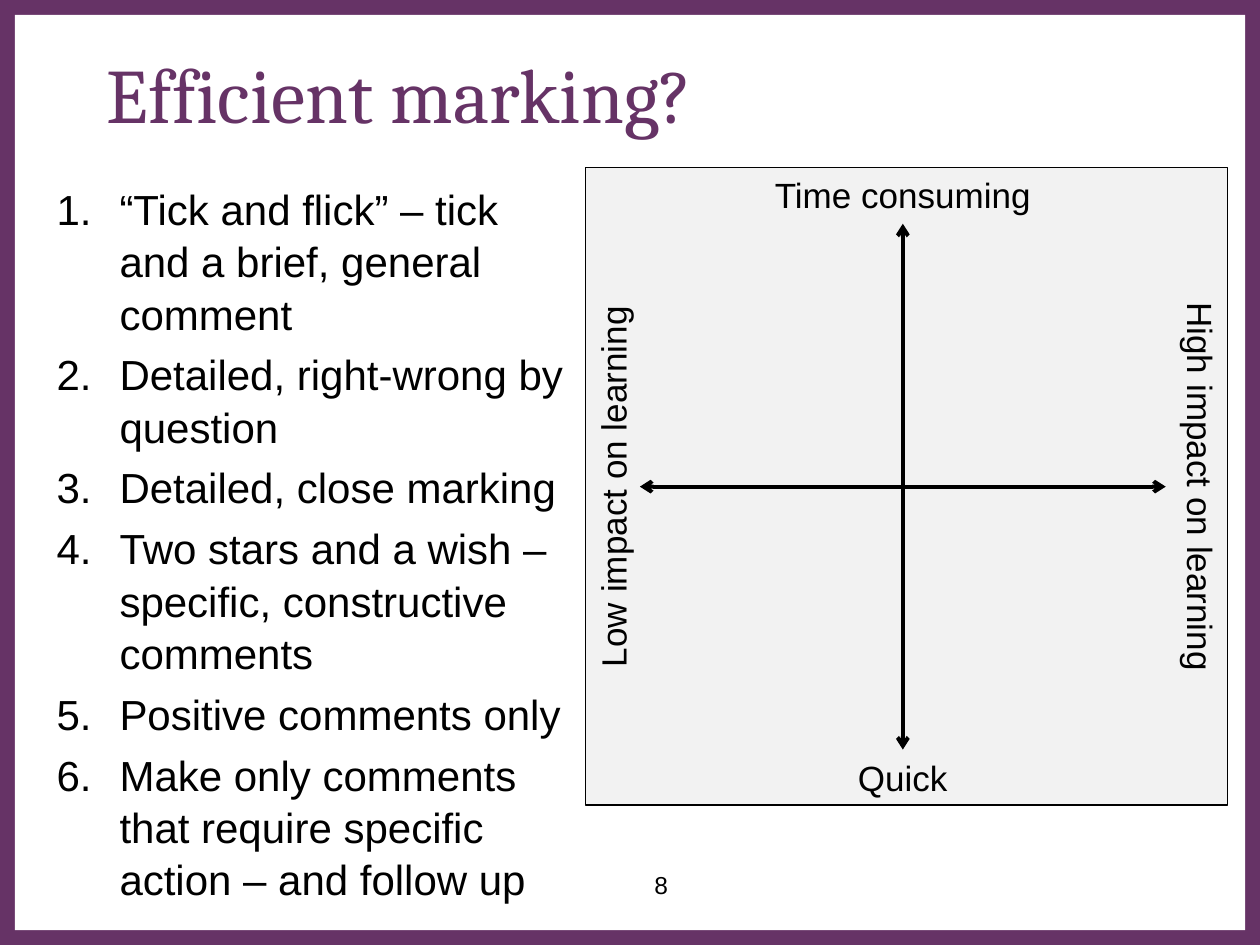
from lxml.etree import SubElement as Sub
from pptx import Presentation as Deck
from pptx.dml.color import RGBColor as Rgb
from pptx.enum.shapes import MSO_CONNECTOR as Conn, MSO_SHAPE as Kind
from pptx.enum.text import MSO_ANCHOR as Anchor, PP_ALIGN as Align
from pptx.oxml.ns import qn
from pptx.util import Cm, Pt

TITLE = "Efficient marking?"
ITEMS = [
    "“Tick and flick” – tick and a brief, general comment",
    "Detailed, right-wrong by question",
    "Detailed, close marking",
    "Two stars and a wish – specific, constructive comments",
    "Positive comments only",
    "Make only comments that require specific action – and follow up",
]
PAGE = "8"

WIDE, HIGH, EDGE = 25.4, 19.05, 0.3
MID, ARM = (18.2, 9.81), 5.3
TAG = 1.12
LABELS = [
    ("Time consuming", 0, -5.87, 8.4, 0),
    ("High impact on learning", 6, 0, 8.86, 90),
    ("Quick", 0, 5.87, 8.4, 0),
    ("Low impact on learning", -5.84, 0, 8.46, 270),
]


class Theme:
    plum = Rgb(0x66, 0x33, 0x66)
    white = Rgb(0xFF, 0xFF, 0xFF)
    grey = Rgb(0xF2, 0xF2, 0xF2)
    black = Rgb(0, 0, 0)
    head, body = "Cambria", "Arial"
    title, list, label, page = 44, 24, 20, 14
    thin, bold = 0.75, 2.25


def write(frame, text, size, font=Theme.body, ink=Theme.black,
          align=Align.LEFT, anchor=Anchor.TOP, number=False):
    frame.word_wrap = True
    frame.vertical_anchor = anchor
    lines = [text] if isinstance(text, str) else text
    for i, line in enumerate(lines):
        para = frame.add_paragraph() if i else frame.paragraphs[0]
        para.alignment = align
        if number:
            para.line_spacing = 1.04
            if i:
                para.space_before = Pt(size * 0.2)
            props = para._p.get_or_add_pPr()
            props.set("marL", str(Cm(1.27)))
            props.set("indent", str(-Cm(1.27)))
            Sub(props, qn("a:buFont"), typeface=font)
            Sub(props, qn("a:buAutoNum"), type="arabicPeriod")
        run = para.add_run()
        run.text = line
        run.font.size = Pt(size)
        run.font.name = font
        run.font.color.rgb = ink


def place(shape, *box):
    shape.left, shape.top, shape.width, shape.height = map(Cm, box)


def block(slide, fill, *box, line=None):
    shape = slide.shapes.add_shape(Kind.RECTANGLE, *map(Cm, box))
    shape.shadow.inherit = False
    shape.fill.solid()
    shape.fill.fore_color.rgb = fill
    if line is None:
        shape.line.fill.background()
    else:
        shape.line.color.rgb = line
        shape.line.width = Pt(Theme.thin)
    return shape


def note(slide, text, size, *box, **form):
    shape = slide.shapes.add_textbox(*map(Cm, box))
    write(shape.text_frame, text, size, **form)
    return shape


def axis(slide, dx, dy):
    x, y = MID
    ends = x - dx, y - dy, x + dx, y + dy
    line = slide.shapes.add_connector(Conn.STRAIGHT, *map(Cm, ends))
    line.line.color.rgb = Theme.black
    line.line.width = Pt(Theme.bold)
    stroke = line.line._get_or_add_ln()
    for end in ("a:headEnd", "a:tailEnd"):
        Sub(stroke, qn(end), type="arrow")
    Sub(line._element.spPr, qn("a:effectLst"))


def main():
    deck = Deck()
    deck.slide_width, deck.slide_height = Cm(WIDE), Cm(HIGH)
    slide = deck.slides.add_slide(deck.slide_layouts[5])

    block(slide, Theme.plum, 0, 0, WIDE, HIGH)
    block(slide, Theme.white, EDGE, EDGE, WIDE - 2 * EDGE, HIGH - 2 * EDGE)
    panel = block(slide, Theme.grey, 11.81, 3.38, 12.93, 12.85,
                  line=Theme.black)

    title = slide.shapes.title
    panel._element.addnext(title._element)
    place(title, 1.9, 0.74, 21.59, 2.24)
    write(title.text_frame, TITLE, Theme.title, font=Theme.head,
          ink=Theme.plum, anchor=Anchor.MIDDLE)

    note(slide, ITEMS, Theme.list, 0.89, 3.53, 10.92, 13.59, number=True)
    note(slide, PAGE, Theme.page, 10.69, 17.42, 5.28, 1.19,
         align=Align.CENTER)

    axis(slide, 0, ARM)
    axis(slide, ARM, 0)
    for text, dx, dy, wide, turn in LABELS:
        x, y = MID[0] + dx, MID[1] + dy
        tag = note(slide, text, Theme.label, x - wide / 2, y - TAG / 2,
                   wide, TAG, align=Align.CENTER)
        tag.rotation = turn

    deck.save("out.pptx")


if __name__ == "__main__":
    main()
